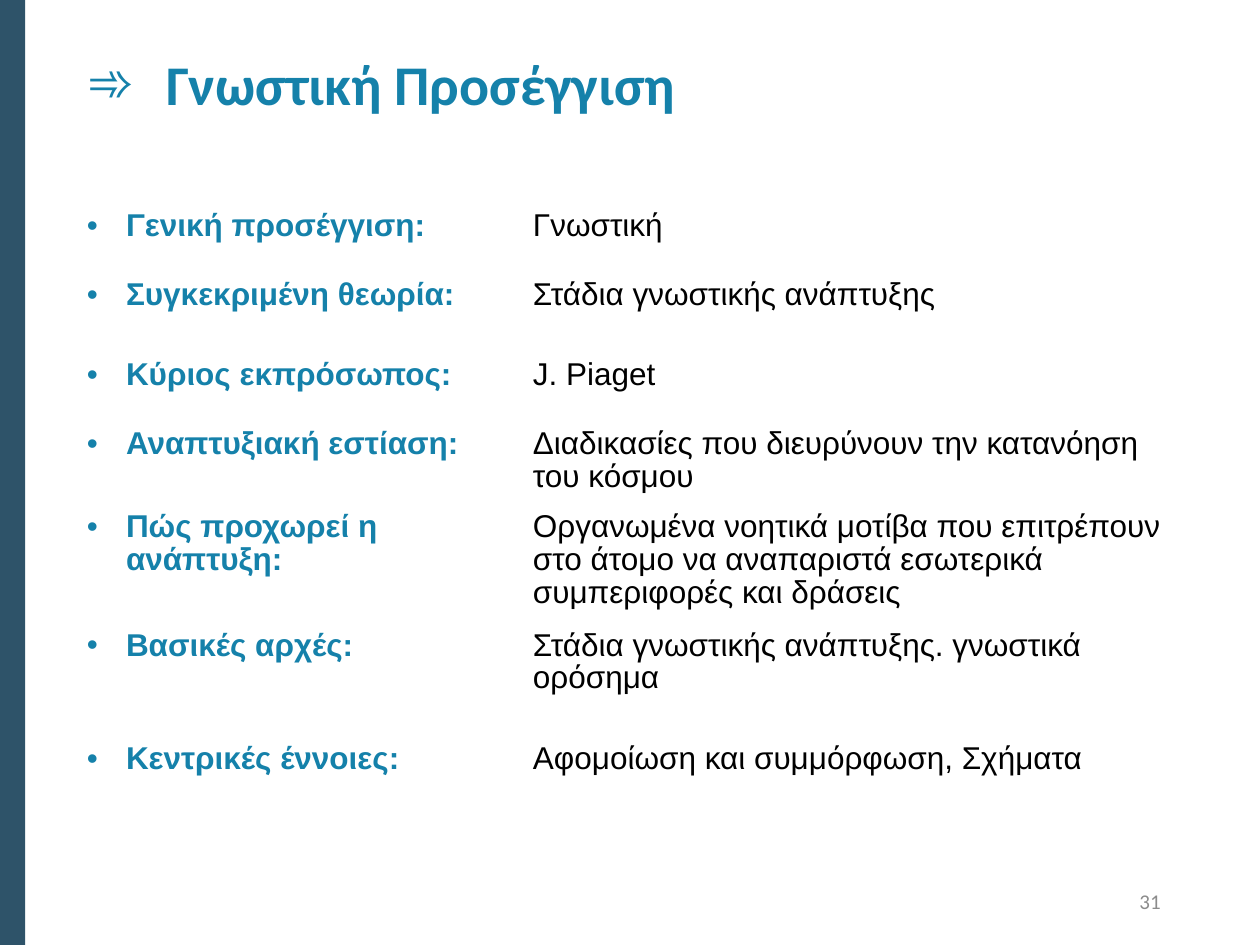
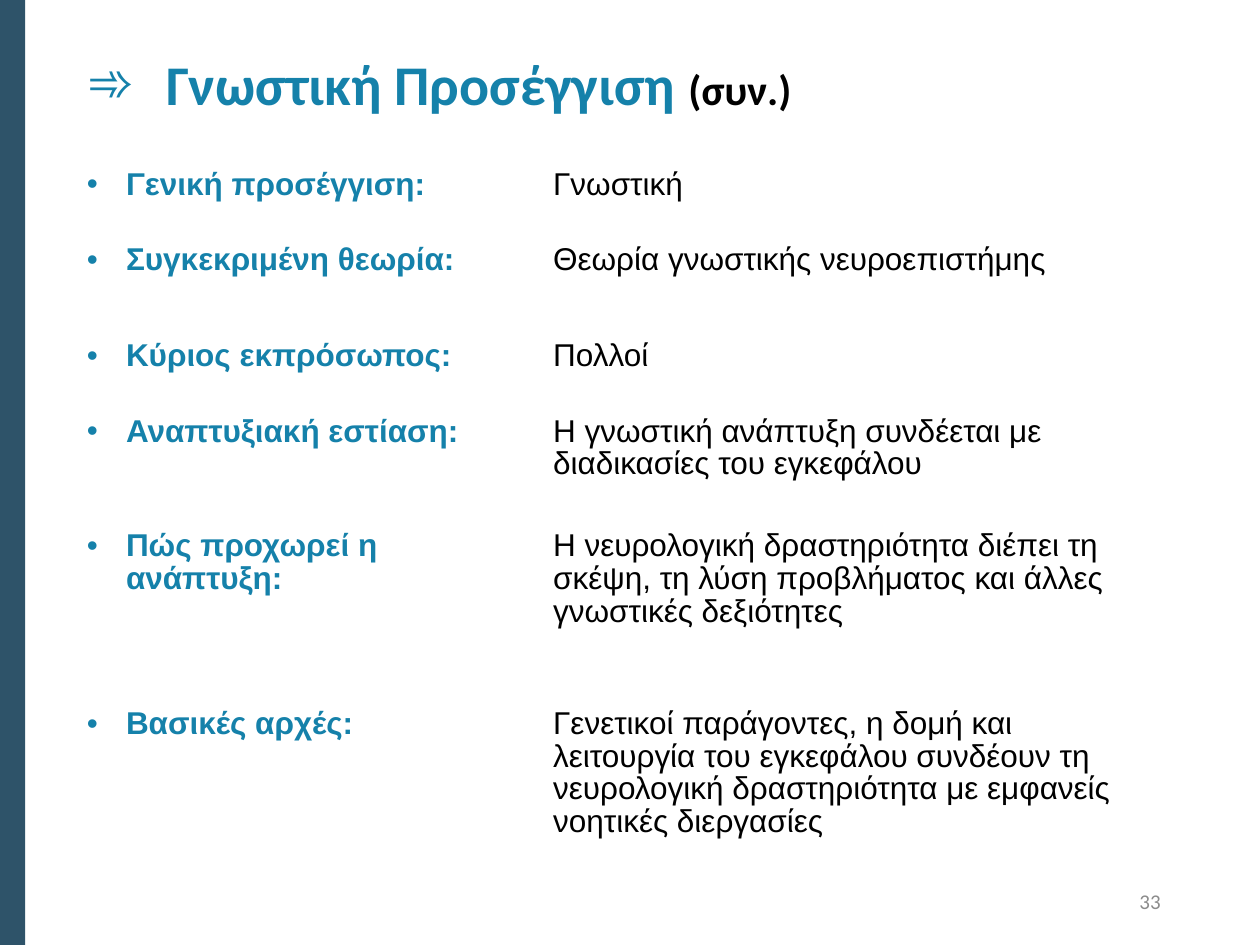
from lxml import etree
from pptx import Presentation
from pptx.dml.color import RGBColor
from pptx.enum import shapes, text
from pptx.oxml import ns
from pptx.util import Inches, Pt

BLUE = RGBColor(0x15, 0x81, 0xAA)
BAND = RGBColor(0x2E, 0x53, 0x69)
BLACK = RGBColor(0, 0, 0)
GREY = RGBColor(0x8C, 0x8C, 0x8C)

TITLE = "Γνωστική Προσέγγιση"
LABELS = [
    "Γενική προσέγγιση:",
    "Συγκεκριμένη θεωρία:",
    "Κύριος εκπρόσωπος:",
    "Αναπτυξιακή εστίαση:",
    "Πώς προχωρεί η ανάπτυξη:",
    "Βασικές αρχές:",
    "Κεντρικές έννοιες:",
]
SLIDES = [
    {
        "number": "31",
        "suffix": "",
        "top": 1.62,
        "columns": [3.54, 5.2],
        "rows": [0.55, 0.63, 0.55, 0.66, 0.94, 0.9, 0.38],
        "answers": [
            "Γνωστική",
            "Στάδια γνωστικής ανάπτυξης",
            "J. Piaget",
            "Διαδικασίες που διευρύνουν την κατανόηση του κόσμου",
            "Οργανωμένα νοητικά μοτίβα που επιτρέπουν στο άτομο να "
            "αναπαριστά εσωτερικά συμπεριφορές και δράσεις",
            "Στάδια γνωστικής ανάπτυξης. γνωστικά ορόσημα",
            "Αφομοίωση και συμμόρφωση, Σχήματα",
        ],
    },
    {
        "number": "33",
        "suffix": "(συν.)",
        "top": 1.29,
        "columns": [3.7, 5.04],
        "rows": [0.6, 0.76, 0.6, 0.91, 1.41, 1.22],
        "answers": [
            "Γνωστική",
            "Θεωρία γνωστικής νευροεπιστήμης",
            "Πολλοί",
            "Η γνωστική ανάπτυξη συνδέεται με διαδικασίες του εγκεφάλου",
            "Η νευρολογική δραστηριότητα διέπει τη σκέψη, τη λύση "
            "προβλήματος και άλλες γνωστικές δεξιότητες",
            "Γενετικοί παράγοντες, η δομή και λειτουργία του εγκεφάλου "
            "συνδέουν τη νευρολογική δραστηριότητα με εμφανείς νοητικές "
            "διεργασίες",
        ],
    },
]

TITLE_FONT = {"name": "Calibri", "size": Pt(32), "bold": True}
SUFFIX_FONT = {"name": "Calibri", "size": Pt(24), "bold": True}
LABEL_FONT = {"name": "Arial", "size": Pt(18), "bold": True}
ANSWER_FONT = {"name": "Arial", "size": Pt(18), "bold": False}
NUMBER_FONT = {"name": "Calibri", "size": Pt(12)}


def add_span(para, words, font, color):
    span = para.add_run()
    span.text = words
    for key, value in font.items():
        setattr(span.font, key, value)
    span.font.color.rgb = color


def add_bullet(para, symbol, indent):
    properties = para._p.get_or_add_pPr()
    properties.set("marL", str(Inches(indent)))
    properties.set("indent", str(-Inches(indent)))
    etree.SubElement(properties, ns.qn("a:buFont"), typeface="Arial")
    etree.SubElement(properties, ns.qn("a:buChar"), char=symbol)


def add_box(page, left, top, width, height, anchor):
    box = page.shapes.add_textbox(*map(Inches, (left, top, width, height)))
    box.text_frame.word_wrap = True
    box.text_frame.vertical_anchor = anchor
    return box.text_frame.paragraphs[0]


def add_borders(cell):
    properties = cell._tc.get_or_add_tcPr()
    for index, side in enumerate(("lnL", "lnR", "lnT", "lnB")):
        line = etree.Element(ns.qn("a:" + side), w=str(Pt(1)))
        fill = etree.SubElement(line, ns.qn("a:solidFill"))
        etree.SubElement(fill, ns.qn("a:srgbClr"), val="FFFFFF")
        properties.insert(index, line)


def add_frame(page, content):
    band = page.shapes.add_shape(
        shapes.MSO_SHAPE.RECTANGLE, 0, 0, Inches(0.2), Inches(7.5))
    band.shadow.inherit = False
    band.fill.solid()
    band.fill.fore_color.rgb = BAND
    band.line.fill.background()

    para = add_box(page, 0.6, 0.34, 8.74, 0.97, text.MSO_ANCHOR.TOP)
    add_bullet(para, "➾", 0.62)
    suffix = content["suffix"]
    add_span(para, TITLE + " " if suffix else TITLE, TITLE_FONT, BLUE)
    if suffix:
        add_span(para, suffix, SUFFIX_FONT, BLACK)

    para = add_box(page, 7.06, 6.95, 2.25, 0.4, text.MSO_ANCHOR.MIDDLE)
    para.alignment = text.PP_ALIGN.RIGHT
    add_span(para, content["number"], NUMBER_FONT, GREY)


def add_theory_table(page, content):
    columns, rows = content["columns"], content["rows"]
    table = page.shapes.add_table(
        len(rows), len(columns), Inches(0.59), Inches(content["top"]),
        Inches(sum(columns)), Inches(sum(rows))).table
    table.first_row = table.horz_banding = False
    for column, width in zip(table.columns, columns):
        column.width = Inches(width)
    for row, height, label, answer in zip(
            table.rows, rows, LABELS, content["answers"]):
        row.height = Inches(height)
        for cell in row.cells:
            cell.fill.background()
            add_borders(cell)
        label_para, answer_para = (
            cell.text_frame.paragraphs[0] for cell in row.cells)
        label_para.line_spacing = answer_para.line_spacing = 0.93
        add_bullet(label_para, "•", 0.31)
        add_span(label_para, label, LABEL_FONT, BLUE)
        add_span(answer_para, answer, ANSWER_FONT, BLACK)


def main():
    deck = Presentation()
    deck.slide_width, deck.slide_height = Inches(10), Inches(7.5)
    for content in SLIDES:
        page = deck.slides.add_slide(deck.slide_layouts[6])
        add_frame(page, content)
        add_theory_table(page, content)
    deck.save("out.pptx")


if __name__ == "__main__":
    main()
